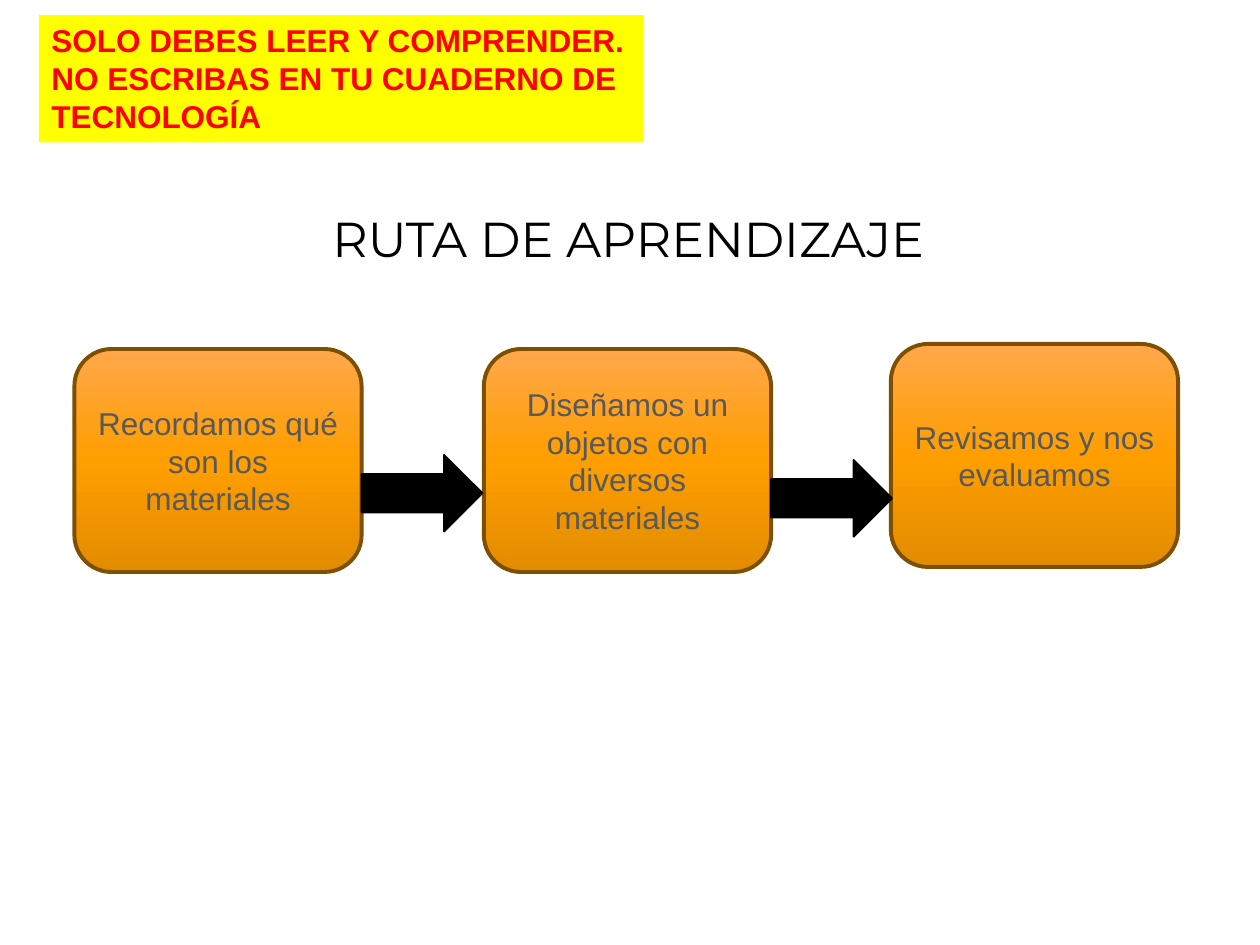
from copy import deepcopy

from pptx import Presentation
from pptx.dml.color import RGBColor
from pptx.enum.shapes import MSO_SHAPE as Shape
from pptx.enum.text import MSO_ANCHOR as Anchor, MSO_AUTO_SIZE as AutoSize, PP_ALIGN as Align
from pptx.util import Inches, Pt

BLACK = RGBColor(0x00, 0x00, 0x00)
GRAY = RGBColor(0x59, 0x59, 0x59)
RED = RGBColor(0xFF, 0x00, 0x00)
YELLOW = RGBColor(0xFF, 0xFF, 0x00)
BROWN = RGBColor(0x7F, 0x4F, 0x00)
ORANGES = [
    RGBColor(0xFF, 0xA8, 0x4B),
    RGBColor(0xFE, 0x9E, 0x00),
    RGBColor(0xE2, 0x8C, 0x00),
]

TITLE = "RUTA DE APRENDIZAJE"
NOTICE = "SOLO DEBES LEER Y COMPRENDER. NO ESCRIBAS EN TU CUADERNO DE TECNOLOGÍA"
STEPS = [
    ("Recordamos qué son los materiales", 0.59, 2.77),
    ("Diseñamos un objetos con diversos materiales", 3.84, 2.77),
    ("Revisamos y nos evaluamos", 7.07, 2.73),
]
STEP_W, STEP_H = 2.28, 1.77
ARROW_TOPS = [3.61, 3.65]
ARROW_W, ARROW_H = 0.96, 0.61


def write(shape, text, font_name, size, color, align, anchor, bold=False):
    frame = shape.text_frame
    frame.word_wrap = True
    frame.vertical_anchor = anchor
    frame.text = text
    paragraph = frame.paragraphs[0]
    paragraph.alignment = align
    font = paragraph.font
    font.name, font.size, font.bold = font_name, Pt(size), bold
    font.color.rgb = color
    return paragraph


def add_shape(slide, kind, left, top, width, height):
    shape = slide.shapes.add_shape(
        kind, Inches(left), Inches(top), Inches(width), Inches(height))
    shape.shadow.inherit = False
    return shape


def fill_solid(shape, color):
    shape.fill.solid()
    shape.fill.fore_color.rgb = color


def fill_gradient(shape, colors):
    fill = shape.fill
    fill.gradient()
    fill.gradient_angle = 270
    stop_list = fill._fill._gradFill.gsLst
    stop_list.insert(1, deepcopy(stop_list[0]))
    for index, (stop, color) in enumerate(zip(fill.gradient_stops, colors)):
        stop.position = index / (len(colors) - 1)
        stop.color.rgb = color


def set_line(shape, color, width):
    shape.line.color.rgb = color
    shape.line.width = Pt(width)


def main():
    deck = Presentation()
    deck.slide_width, deck.slide_height = Inches(10), Inches(7.5)
    slide = deck.slides.add_slide(deck.slide_layouts[5])

    title = slide.shapes.title
    title.left, title.top = Inches(1.14), Inches(0.87)
    title.width, title.height = Inches(7.69), Inches(1.31)
    heading = write(title, TITLE, "Montserrat", 28, BLACK, Align.CENTER, Anchor.BOTTOM)
    heading.line_spacing = 0.9
    title.text_frame.auto_size = AutoSize.NONE

    for text, left, top in STEPS:
        step = add_shape(slide, Shape.ROUNDED_RECTANGLE, left, top, STEP_W, STEP_H)
        fill_gradient(step, ORANGES)
        set_line(step, BROWN, 2.25)
        write(step, text, "Arial", 18, GRAY, Align.CENTER, Anchor.MIDDLE)

    for (_, left, _), top in zip(STEPS, ARROW_TOPS):
        arrow = add_shape(slide, Shape.RIGHT_ARROW, left + STEP_W, top, ARROW_W, ARROW_H)
        fill_solid(arrow, BLACK)
        set_line(arrow, BLACK, 1)

    notice = add_shape(slide, Shape.RECTANGLE, 0.31, 0.12, 4.8, 1.01)
    fill_solid(notice, YELLOW)
    notice.line.fill.background()
    write(notice, NOTICE, "Arial", 18, RED, Align.LEFT, Anchor.TOP, bold=True)
    notice.text_frame.auto_size = AutoSize.SHAPE_TO_FIT_TEXT

    deck.save("out.pptx")


if __name__ == "__main__":
    main()
